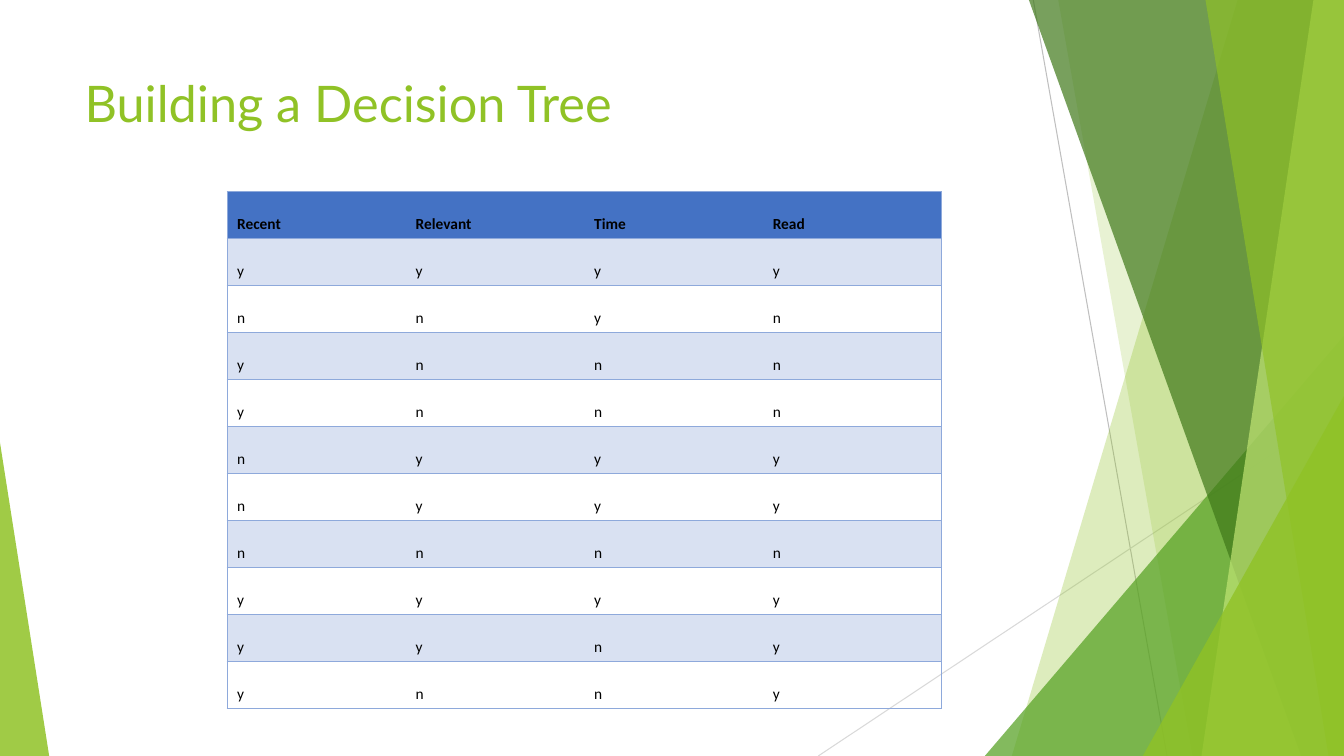
from lxml.etree import SubElement
from pptx import Presentation
from pptx.dml.color import RGBColor
from pptx.enum.shapes import MSO_CONNECTOR, MSO_SHAPE
from pptx.enum.text import MSO_ANCHOR, PP_ALIGN
from pptx.oxml import parse_xml
from pptx.oxml.ns import nsdecls, qn
from pptx.util import Cm, Pt

WIDE, HIGH = 33.87, 19.05
GREEN = "90C226"
EDGE = "8EA9DB"
HEAD = ["Recent", "Relevant", "Time", "Read"]
DATA = ["yyyy", "nnyn", "ynnn", "ynnn", "nyyy",
        "nyyy", "nnnn", "yyyy", "yyny", "ynny"]


def color(text):
    """Turn a hex string into a colour."""
    return RGBColor.from_string(text)


def paint(shape, tint, alpha):
    """Give a shape a see-through fill and no outline."""
    shape.shadow.inherit = False
    shape.fill.solid()
    shape.fill.fore_color.rgb = color(tint)
    shape.line.fill.background()
    node = shape.fill._xPr.find(qn("a:solidFill"))[0]
    SubElement(node, qn("a:alpha"), val=str(alpha * 1000))


def add_ray(slide, start, end, tint):
    """Draw a thin line between two points."""
    ray = slide.shapes.add_connector(
        MSO_CONNECTOR.STRAIGHT, *map(Cm, start + end))
    ray.line.color.rgb = color(tint)
    ray.line.width = Pt(0.75)
    SubElement(ray.element.spPr, qn("a:effectLst"))


def add_sheet(slide, box, top, foot, tint, alpha):
    """Fill the box to the right of a slanted edge."""
    left, head, width, height = box
    right, base = left + width, head + height
    form = slide.shapes.build_freeform(Cm(left + top), Cm(head))
    form.add_line_segments([(Cm(x), Cm(y)) for x, y in (
        (right, head), (right, base), (left + foot, base))])
    paint(form.convert_to_shape(), tint, alpha)


def add_wedge(slide, box, tip, tint, alpha):
    """Fill a box with a right-angled triangle."""
    wedge = slide.shapes.add_shape(
        MSO_SHAPE.ISOSCELES_TRIANGLE, *map(Cm, box))
    wedge.adjustments[0] = tip
    paint(wedge, tint, alpha)


def add_fan(slide, box):
    """Draw the layered green bands on the right."""
    left, top, width, height = box
    right, base = left + width, top + height
    add_ray(slide, (left + 5.42, top), (left + 8.79, base), "BFBFBF")
    add_ray(slide, (right, top + 10.24), (left, base), "D9D9D9")
    add_sheet(slide, box, 10.57, 4.88, GREEN, 30)
    add_sheet(slide, box, 6.05, 9.43, GREEN, 20)
    add_wedge(slide, (left + 4.2, base - 10.59, width - 4.2, 10.59),
              1, "54A021", 72)
    add_sheet(slide, box, 5.31, 12.17, "3F7819", 70)
    add_sheet(slide, box, 12.48, 9.66, "C0E474", 70)
    add_sheet(slide, box, 9.76, 12.86, GREEN, 65)
    add_wedge(slide, (left + 8.18, base - 9.07, width - 8.18, 9.07),
              1, GREEN, 80)


def add_title(slide, box, text):
    """Place the title in front of the bands."""
    title = slide.shapes.title
    title.element.getparent().append(title.element)
    title.left, title.top, title.width, title.height = map(Cm, box)
    frame = title.text_frame
    frame.text = text
    frame.vertical_anchor = MSO_ANCHOR.TOP
    para = frame.paragraphs[0]
    para.alignment = PP_ALIGN.LEFT
    para.font.name, para.font.size = "Lato", Pt(36)
    para.font.color.rgb = color(GREEN)


def add_edges(cell, first, last):
    """Rule a cell above, below and at the table's outer sides."""
    shown = {"L": first, "R": last, "T": True, "B": True}
    for spot, (side, show) in enumerate(shown.items()):
        ink = (f'<a:solidFill><a:srgbClr val="{EDGE}"/></a:solidFill>'
               if show else "<a:noFill/>")
        cell._tc.get_or_add_tcPr().insert(spot, parse_xml(
            f'<a:ln{side} {nsdecls("a")} w="9525">{ink}</a:ln{side}>'))


def fill_cell(cell, text, row):
    """Write one cell in the style of its row."""
    cell.text = text
    cell.vertical_anchor = MSO_ANCHOR.BOTTOM
    font = cell.text_frame.paragraphs[0].font
    font.name, font.size, font.bold = "Calibri", Pt(11), row == 0
    font.color.rgb = color("000000")
    if row and row % 2 == 0:
        cell.fill.background()
    else:
        cell.fill.solid()
        cell.fill.fore_color.rgb = color("D9E1F2" if row else "4472C4")


def add_grid(slide, box, rows):
    """Build the table of examples with equal rows and columns."""
    count, span = len(rows), len(rows[0])
    grid = slide.shapes.add_table(count, span, *map(Cm, box)).table
    grid.first_row = grid.horz_banding = False
    for line in grid.rows:
        line.height = Cm(box[3] / count)
    for col in grid.columns:
        col.width = Cm(box[2] / span)
    for row, words in enumerate(rows):
        for col, word in enumerate(words):
            cell = grid.cell(row, col)
            fill_cell(cell, word, row)
            add_edges(cell, col == 0, col == span - 1)


def main():
    """Build and save the slide."""
    deck = Presentation()
    deck.slide_width, deck.slide_height = Cm(WIDE), Cm(HIGH)
    slide = deck.slides.add_slide(deck.slide_layouts[5])
    add_fan(slide, (20.62, 0, WIDE - 20.62, HIGH))
    add_wedge(slide, (0, HIGH - 7.9, 1.24, 7.9), 0, GREEN, 85)
    add_title(slide, (1.88, 1.7, 23.88, 3.66), "Building a Decision Tree")
    add_grid(slide, (5.72, 4.83, 18, 13.03), [HEAD, *DATA])
    deck.save("out.pptx")


if __name__ == "__main__":
    main()
